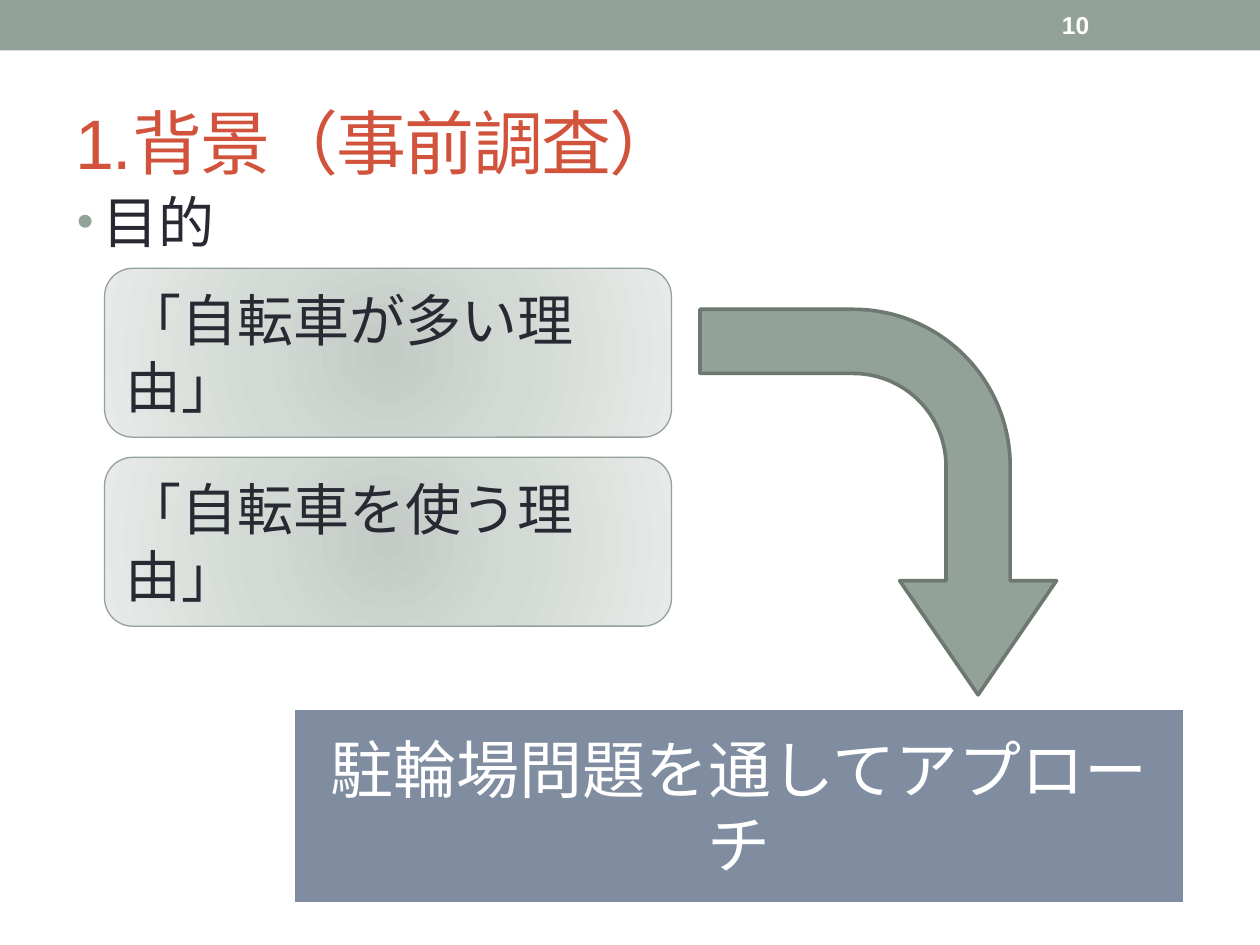
from lxml import etree
from pptx import Presentation
from pptx import util as u
from pptx.dml.color import RGBColor
from pptx.enum import shapes, text
from pptx.oxml import parse_xml
from pptx.oxml.ns import nsdecls, qn

COLORS = {
    "sage": "93A299", "sage_dark": "6D7871", "rust": "D2533C",
    "ink": "292934", "slate": "808DA0", "white": "FFFFFF",
}
CARD_STOPS = [(0, "C4CAC6"), (45, "D3DAD6"), (100, "E7EAE8")]
CELL = u.Inches(0.1)  # the slide is a grid of 100 columns by 75 rows
REASONS = ["「自転車が多い理由」", "「自転車を使う理由」"]


def color(name):
    return RGBColor.from_string(COLORS[name])


def cells(box):
    return [round(value * CELL) for value in box]


def place(shape, box):
    for name, value in zip(("left", "top", "width", "height"), cells(box)):
        setattr(shape, name, value)


def write(shape, words, size, ink, align=text.PP_ALIGN.LEFT,
          anchor=text.MSO_ANCHOR.MIDDLE, bold=False):
    frame = shape.text_frame
    frame_format = {"word_wrap": True, "vertical_anchor": anchor,
                    "auto_size": text.MSO_AUTO_SIZE.NONE}
    for name, value in frame_format.items():
        setattr(frame, name, value)
    para = frame.paragraphs[0]
    para.alignment = align
    span = para.add_run()
    span.text = words
    span_format = {"name": "Arial", "size": u.Pt(size), "bold": bold}
    for name, value in span_format.items():
        setattr(span.font, name, value)
    span.font.color.rgb = color(ink)
    return para, span


def add_block(page, kind, box, fill, line=None, width=0):
    shape = page.shapes.add_shape(kind, *cells(box))
    shape.shadow.inherit = False
    shape.fill.solid()
    shape.fill.fore_color.rgb = color(fill)
    if line:
        shape.line.color.rgb = color(line)
        shape.line.width = u.Pt(width)
    else:
        shape.line.fill.background()
    return shape


def radial_fill(shape, stops):
    marks = "".join(
        f'<a:gs pos="{share * 1000}"><a:srgbClr val="{tint}"/></a:gs>'
        for share, tint in stops)
    gradient = parse_xml(
        f'<a:gradFill {nsdecls("a")} rotWithShape="1"><a:gsLst>{marks}</a:gsLst>'
        '<a:path path="circle"><a:fillToRect l="100000" t="100000" '
        'r="100000" b="100000"/></a:path></a:gradFill>')
    props = shape.fill._xPr
    props.replace(props.find(qn("a:solidFill")), gradient)


def add_header(page, box, number):
    left, top, width, height = box
    add_block(page, shapes.MSO_SHAPE.RECTANGLE, box, "sage")
    label = page.shapes.add_textbox(*cells(
        (left + width * 0.833, top + height * 0.05, width * 0.117, height * 0.9)))
    write(label, number, 14, "white", bold=True)


def add_title(page, box, words):
    title = page.shapes.title
    place(title, box)
    span = write(title, words, 40, "rust")[1]
    span.font._element.set("spc", "-100")


def add_purpose(page, box, words):
    body = page.placeholders[1]
    place(body, box)
    para = write(body, words, 32, "ink", anchor=text.MSO_ANCHOR.TOP)[0]
    props = para._p.get_or_add_pPr()
    props.set("marL", str(u.Inches(0.2)))
    props.set("indent", str(-u.Inches(0.2)))
    tint = etree.SubElement(props, qn("a:buClr"))
    etree.SubElement(tint, qn("a:srgbClr")).set("val", COLORS["sage"])
    etree.SubElement(props, qn("a:buSzPct")).set("val", "85000")
    etree.SubElement(props, qn("a:buFont")).set("typeface", "Arial")
    etree.SubElement(props, qn("a:buChar")).set("char", "•")


def add_reasons(page, box, reasons, gap=1.6):
    left, top, width, height = box
    row = (height - gap * (len(reasons) - 1)) / len(reasons)
    for index, words in enumerate(reasons):
        card = add_block(page, shapes.MSO_SHAPE.ROUNDED_RECTANGLE,
                         (left, top + index * (row + gap), width, row),
                         "sage", "sage", 0.75)
        radial_fill(card, CARD_STOPS)
        write(card, words, 32, "ink")


def add_turn(page, box):
    arrow = add_block(page, shapes.MSO_SHAPE.BENT_ARROW, box,
                      "sage", "sage_dark", 2.08)
    arrow.rotation = 90
    for index, share in enumerate((0.18, 0.22, 0.32, 0.44)):
        arrow.adjustments[index] = share


def add_conclusion(page, box, words):
    banner = add_block(page, shapes.MSO_SHAPE.RECTANGLE, box,
                       "slate", "white", 3.5)
    write(banner, words, 36, "white", align=text.PP_ALIGN.CENTER)


def main():
    deck = Presentation()
    deck.slide_width, deck.slide_height = 100 * CELL, 75 * CELL
    page = deck.slides.add_slide(deck.slide_layouts[1])

    # Header band, title and bullet
    add_header(page, (0, 0, 100, 4), "10")
    add_title(page, (5, 5.8, 90, 10.8), "1.背景（事前調査）")
    add_purpose(page, (5.1, 14.4, 14.2, 7.1), "目的")

    # Reasons lead through the arrow to the conclusion
    add_reasons(page, (8.3, 21.3, 45, 28.4), REASONS)
    add_turn(page, (54.4, 25.7, 30.6, 28.3))
    add_conclusion(page, (23.2, 56.1, 70.9, 15.7), "駐輪場問題を通してアプローチ")

    deck.save("out.pptx")


if __name__ == "__main__":
    main()
